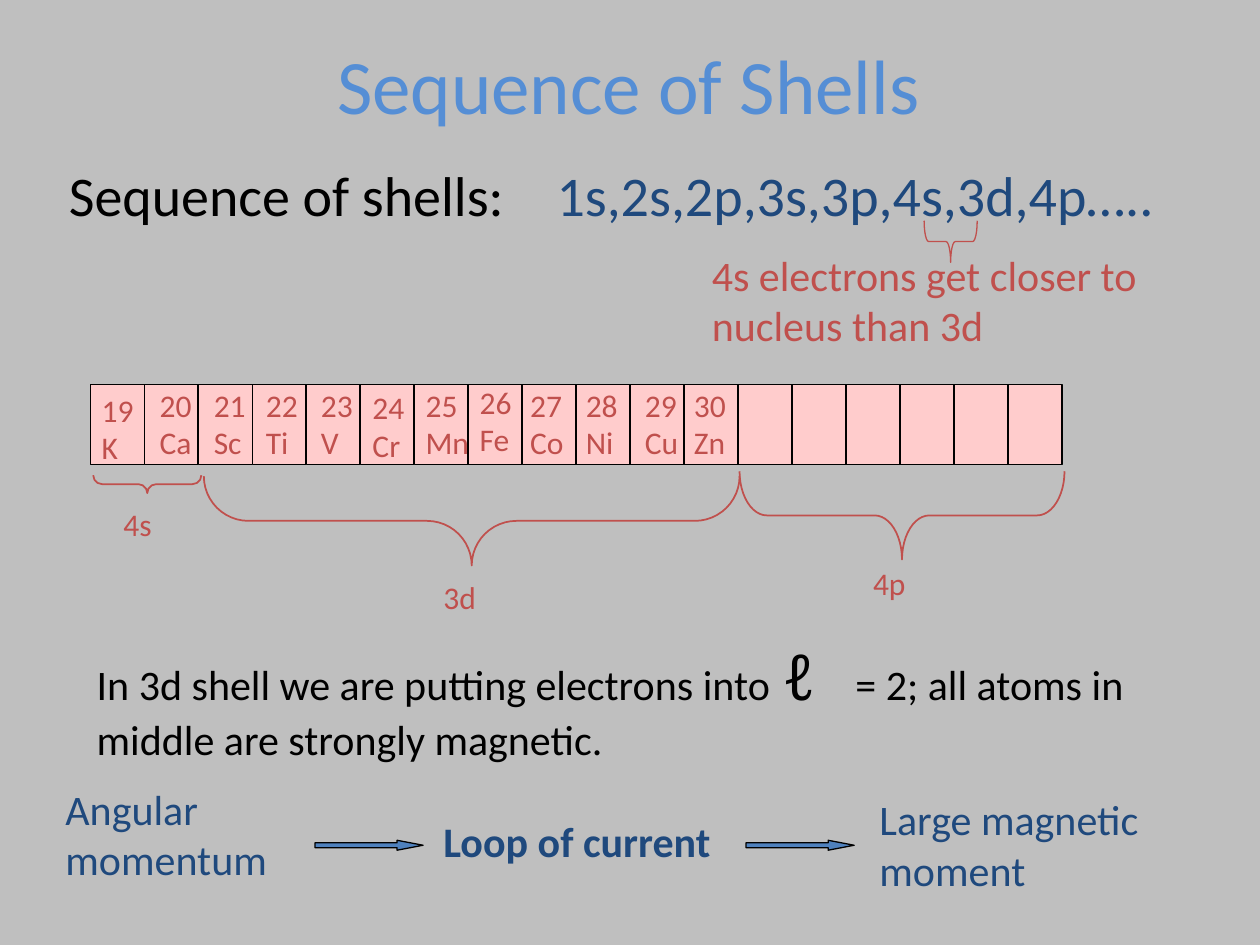
from lxml import etree
from pptx import Presentation, util as u
from pptx.dml.color import RGBColor
from pptx.enum import shapes, text
from pptx.oxml.ns import qn

BLACK, NAVY, RED, SKY = "000000", "1F497D", "C0504D", "558ED5"
GREY, PINK, BLUE = "BFBFBF", "FFCCCC", "4F81BD"

TITLE = ("Sequence of Shells", (1.88, 0.1, 21.59, 3.18))
STATEMENTS = [
    ((1.14, 3.12, 23.01, 1.63), [("Sequence of shells:", {"size": 32, "color": BLACK}),
                                 ("\t1s,2s,2p,3s,3p,4s,3d,4p…..", {"size": 32, "color": NAVY})]),
    ((14.1, 4.9, 9.6, 2.31), [("4s electrons get closer to nucleus than 3d", {"size": 24, "color": RED})]),
    ((1.7, 12.73, 22.25, 2.82), [
        ("In 3d shell we are putting electrons into ", {"size": 24, "color": BLACK}),
        ("ℓ ", {"size": 36, "color": BLACK, "name": "Noto Sans Mono"}),
        ("= 2; all atoms in middle are strongly magnetic.", {"size": 24, "color": BLACK})]),
    ((1.07, 15.67, 5.49, 2.31), [("Angular momentum", {"size": 24, "color": NAVY})]),
    ((8.69, 16.31, 6.58, 1.3), [("Loop of current", {"size": 24, "color": NAVY, "bold": True})]),
    ((17.48, 15.88, 7.92, 2.31), [("Large magnetic moment", {"size": 24, "color": NAVY})]),
]
SEQUENCE_TAB = 9.83
ORBITALS, ROW = 18, (1.82, 7.75, 19.59, 1.62)
ELEMENTS = [
    ("19\nK", 1.8, 7.75), ("20\nCa", 2.97, 7.65), ("21\nSc", 4.06, 7.65),
    ("22 Ti", 5.11, 7.65), ("23 V", 6.22, 7.65), ("24 Cr", 7.26, 7.7),
    ("25 Mn", 8.33, 7.65), ("26 Fe", 9.42, 7.59), ("27 Co", 10.44, 7.65),
    ("28 Ni", 11.56, 7.65), ("29 Cu", 12.75, 7.65), ("30 Zn", 13.74, 7.65),
]
SHELLS = [("4s", (2.24, 10.06, 2.31, 1.27)), ("3d", (8.69, 11.53, 2.67, 1.27)),
          ("4p", (17.35, 11.25, 1.68, 1.27))]
BRACES = [
    ((18.63, 4.45, 1.07, 0.84), 0.11, 0.75),
    ((1.88, 9.58, 2.18, 0.36), 0.5, 1),
    ((4.11, 9.6, 10.8, 1.8), 0.5, 1),
    ((14.91, 9.5, 6.55, 1.78), 0.31, 1),
]
ARROWS = [(6.35, 16.94, 2.18, 0.2), (15.04, 16.94, 2.18, 0.2)]


def rgb(color):
    """Turn a hex string into a colour."""
    return RGBColor.from_string(color)


def style(font, size, color, **rest):
    """Set the font's size, colour and other values."""
    font.color.rgb = rgb(color)
    for key, value in {"name": "Calibri", "size": u.Pt(size), **rest}.items():
        setattr(font, key, value)


def write(slide, box, runs):
    """Add a wrapped text box; a line break in a run starts a paragraph."""
    frame = slide.shapes.add_textbox(*map(u.Cm, box)).text_frame
    frame.word_wrap = True
    paragraph = frame.paragraphs[0]
    for words, look in runs:
        for number, line in enumerate(words.split("\n")):
            if number:
                paragraph = frame.add_paragraph()
            run = paragraph.add_run()
            run.text = line
            style(run.font, **look)
    return frame


def draw(slide, kind, box, fill, line, width, adjust=()):
    """Add a preset shape with a plain fill and outline."""
    shape = slide.shapes.add_shape(kind, *map(u.Cm, box))
    shape.shadow.inherit = False
    if fill:
        shape.fill.solid()
        shape.fill.fore_color.rgb = rgb(fill)
    else:
        shape.fill.background()
    shape.line.color.rgb = rgb(line)
    shape.line.width = u.Pt(width)
    for index, value in enumerate(adjust):
        shape.adjustments[index] = value
    return shape


def brace_below(slide, box, curl, width):
    """Turn a left brace so that it fills the box and points down."""
    left, top, span, depth = box
    shift = (span - depth) / 2
    upright = (left + shift, top - shift, depth, span)
    draw(slide, shapes.MSO_SHAPE.LEFT_BRACE, upright, None, RED, width, (curl, 0.5)).rotation = 270


def main():
    """Build the slide and save it."""
    deck = Presentation()
    deck.slide_width, deck.slide_height = u.Cm(25.4), u.Cm(19.05)
    slide = deck.slides.add_slide(deck.slide_layouts[5])
    slide.background.fill.solid()
    slide.background.fill.fore_color.rgb = rgb(GREY)

    heading, place = TITLE
    title = slide.shapes.title
    for side, value in zip(("left", "top", "width", "height"), place):
        setattr(title, side, u.Cm(value))
    title.text_frame.text = heading
    title.text_frame.vertical_anchor = text.MSO_ANCHOR.MIDDLE
    title.text_frame.paragraphs[0].alignment = text.PP_ALIGN.CENTER
    style(title.text_frame.paragraphs[0].runs[0].font, 44, SKY)

    frames = [write(slide, box, runs) for box, runs in STATEMENTS]
    properties = frames[0].paragraphs[0]._p.get_or_add_pPr()
    tabs = etree.SubElement(properties, qn("a:tabLst"))
    etree.SubElement(tabs, qn("a:tab"), pos=str(u.Cm(SEQUENCE_TAB)), algn="l")

    left, top, width, height = ROW
    pitch = width / ORBITALS
    for place in range(ORBITALS):
        cell = (left + place * pitch, top, pitch, height)
        draw(slide, shapes.MSO_SHAPE.RECTANGLE, cell, PINK, BLACK, 0.75)
    labels = [(name, (x, y, 1.57, 1.79)) for name, x, y in ELEMENTS] + SHELLS
    for name, box in labels:
        write(slide, box, [(name, {"size": 18, "color": RED})])
    for brace in BRACES:
        brace_below(slide, *brace)
    for box in ARROWS:
        draw(slide, shapes.MSO_SHAPE.RIGHT_ARROW, box, BLUE, BLACK, 0.75, (0.5, 2.62))
    deck.save("out.pptx")


if __name__ == "__main__":
    main()
